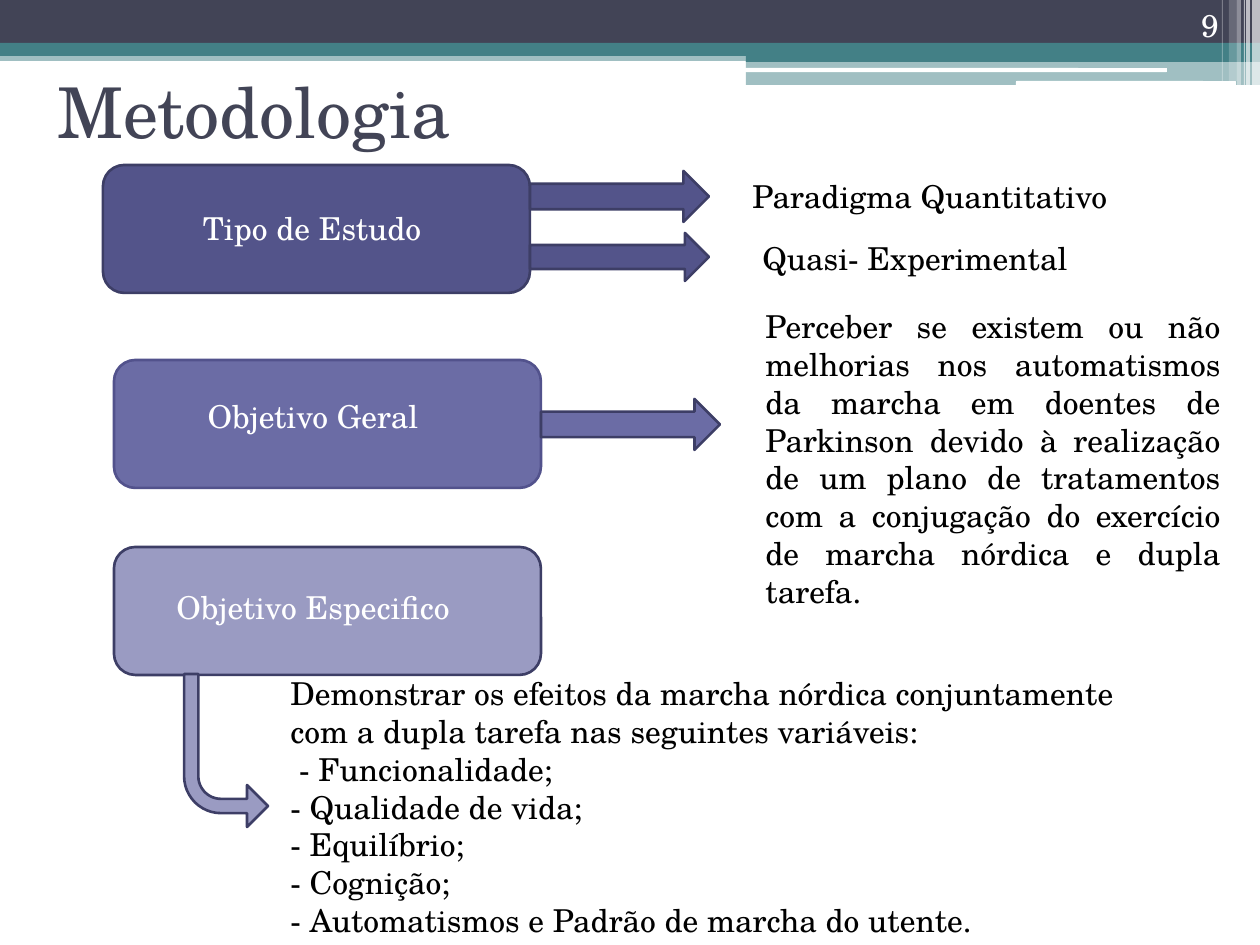
from lxml import etree
from pptx import Presentation
from pptx.dml.color import RGBColor
from pptx.enum import shapes, text
from pptx.oxml.ns import qn
from pptx.util import Emu, Pt

SCALE = 914400 / 126  # EMU in one px
WIDTH, HEIGHT = 1260, 945
FONT = "TeX Gyre Schola"
COLOURS = {
    "white": "FFFFFF", "black": "000000", "slate": "424456", "teal": "438086",
    "dark": "53548A", "medium": "6B6CA5", "light": "9A9BC2",
    "outline": "3D3E66", "soft outline": "52528C",
}
SHAPE = shapes.MSO_SHAPE
ALIGN = text.PP_ALIGN
ANCHOR = text.MSO_ANCHOR
CARD_WIDTH, CARD_HEIGHT = 427, 128
ARROW_WIDTH = 179


def px(*lengths):
    return [Emu(round(length * SCALE)) for length in lengths]


def colour(name):
    return RGBColor.from_string(COLOURS[name])


def add_shape(page, kind, box, fill, line=None, opacity=100):
    shape = page.shapes.add_shape(kind, *px(*box))
    shape.shadow.inherit = False
    shape.fill.solid()
    shape.fill.fore_color.rgb = colour(fill)
    if opacity < 100:
        tint = shape.fill._xPr.find(".//" + qn("a:srgbClr"))
        etree.SubElement(tint, qn("a:alpha"), val=str(opacity * 1000))
    if line:
        shape.line.color.rgb = colour(line)
        shape.line.width = Pt(1.5)
    else:
        shape.line.fill.background()
    return shape


def write(frame, *lines, size=18, ink="black", align=ALIGN.LEFT, anchor=ANCHOR.TOP):
    frame.word_wrap = True
    frame.auto_size = text.MSO_AUTO_SIZE.NONE
    frame.vertical_anchor = anchor
    for index, line in enumerate(lines):
        para = frame.add_paragraph() if index else frame.paragraphs[0]
        para.alignment = align
        span = para.add_run()
        span.text = line
        span.font.name = FONT
        span.font.size = Pt(size)
        span.font.color.rgb = colour(ink)


def add_text(page, box, *lines, **style):
    write(page.shapes.add_textbox(*px(*box)).text_frame, *lines, **style)


def add_banner(page, box):
    left, top, width, height = box
    middle = left + 746
    # Bands: left, top, height, colour, opacity
    for x, y, tall, fill, opacity in [
        (left, 50, 11, "teal", 50),
        (left, 0, 43, "slate", 100),
        (left, 43, 13, "teal", 100),
        (middle, 49, 13, "teal", 100),
        (middle, 60, 25, "teal", 50),
    ]:
        band = (x, top + y, left + width - x, tall)
        add_shape(page, SHAPE.RECTANGLE, band, fill, opacity=opacity)
    # White rules
    for x, y, wide, tall in [(745, 68, 422, 4), (1016, 81, 220, 5)]:
        add_shape(page, SHAPE.ROUNDED_RECTANGLE, (left + x, top + y, wide, tall), "white")
    # Stripes at the right edge: distance from it, width, height, opacity
    for inset, wide, tall, opacity in [
        (8, 8, height, 65), (14, 4, height, 65), (16, 1, height, 60),
        (23, 4, height, 40), (31, 8, height - 4, 20), (38, 1, height - 4, 30),
    ]:
        stripe = (left + width - inset, top, wide, tall)
        add_shape(page, SHAPE.RECTANGLE, stripe, "white", opacity=opacity)
    # Page number
    add_text(page, (left + 1126, top, 105, 50), "9",
             ink="white", align=ALIGN.RIGHT, anchor=ANCHOR.BOTTOM)


def add_title(page, box, words):
    title = page.shapes.title
    title.left, title.top, title.width, title.height = px(*box)
    write(title.text_frame, words, size=40, ink="slate", anchor=ANCHOR.MIDDLE)


def add_card(page, box, label, label_box, fill, line="outline",
             align=ALIGN.CENTER, arrows=()):
    """Rounded card; label and arrows are placed from its corners."""
    left, top, width, height = box
    add_shape(page, SHAPE.ROUNDED_RECTANGLE, box, fill, line)
    x, y, wide = label_box
    add_text(page, (left + x, top + y, wide, 50), label, ink="white", align=align)
    for offset, tall in arrows:
        arrow = (left + width, top + offset, ARROW_WIDTH, tall)
        add_shape(page, SHAPE.RIGHT_ARROW, arrow, fill, "outline")


def add_study_type(page, box):
    left, top, width, height = box
    add_card(page, (left, top, CARD_WIDTH, CARD_HEIGHT), "Tipo de Estudo ",
             (20, 38, 387), "dark", arrows=[(6, 51), (68, 48)])
    add_text(page, (left + 637, top + 6, 436, 50), "Paradigma Quantitativo")
    add_text(page, (left + 647, top + 68, 436, 50), "Quasi- Experimental")


def add_general_goal(page, box):
    left, top, width, height = box
    add_card(page, (left, top + 59, CARD_WIDTH, CARD_HEIGHT), "Objetivo Geral ",
             (20, 31, 367), "medium", "soft outline", arrows=[(39, 51)])
    add_text(page, (left + 639, top, 480, height),
             "Perceber se existem ou não melhorias nos automatismos da marcha em "
             "doentes de Parkinson devido à realização de um plano de tratamentos "
             "com a conjugação do exercício de marcha nórdica e dupla tarefa.",
             align=ALIGN.JUSTIFY)


def add_specific_goal(page, box):
    left, top, width, height = box
    add_card(page, (left, top, CARD_WIDTH, CARD_HEIGHT), "Objetivo Especifico",
             (50, 35, 367), "light", align=ALIGN.LEFT)
    # Bent arrow, turned to run down and then right
    arrow = add_shape(page, SHAPE.BENT_ARROW, (left + 70, top + 127, 84, 153),
                      "light", "outline")
    for index, value in enumerate([0.17, 0.25, 0.25, 0.44]):
        arrow.adjustments[index] = value
    arrow.rotation = 180
    arrow._element.spPr.xfrm.set("flipH", "1")
    add_text(page, (left + 164, top + 121, 881, 280),
             "Demonstrar os efeitos da marcha nórdica conjuntamente com a dupla "
             "tarefa nas seguintes variáveis:",
             " - Funcionalidade;",
             "- Qualidade de vida;",
             "- Equilíbrio;",
             "- Cognição;",
             "- Automatismos e Padrão de marcha do utente.")


def main():
    deck = Presentation()
    deck.slide_width, deck.slide_height = px(WIDTH, HEIGHT)
    page = deck.slides.add_slide(deck.slide_layouts[5])
    add_banner(page, (0, 0, WIDTH, 85))
    add_title(page, (45, 37, 1134, 147), "Metodologia")
    add_study_type(page, (103, 165, 1083, 128))
    add_general_goal(page, (114, 301, 1119, 317))
    add_specific_goal(page, (114, 547, 1045, 401))
    deck.save("out.pptx")


if __name__ == "__main__":
    main()
